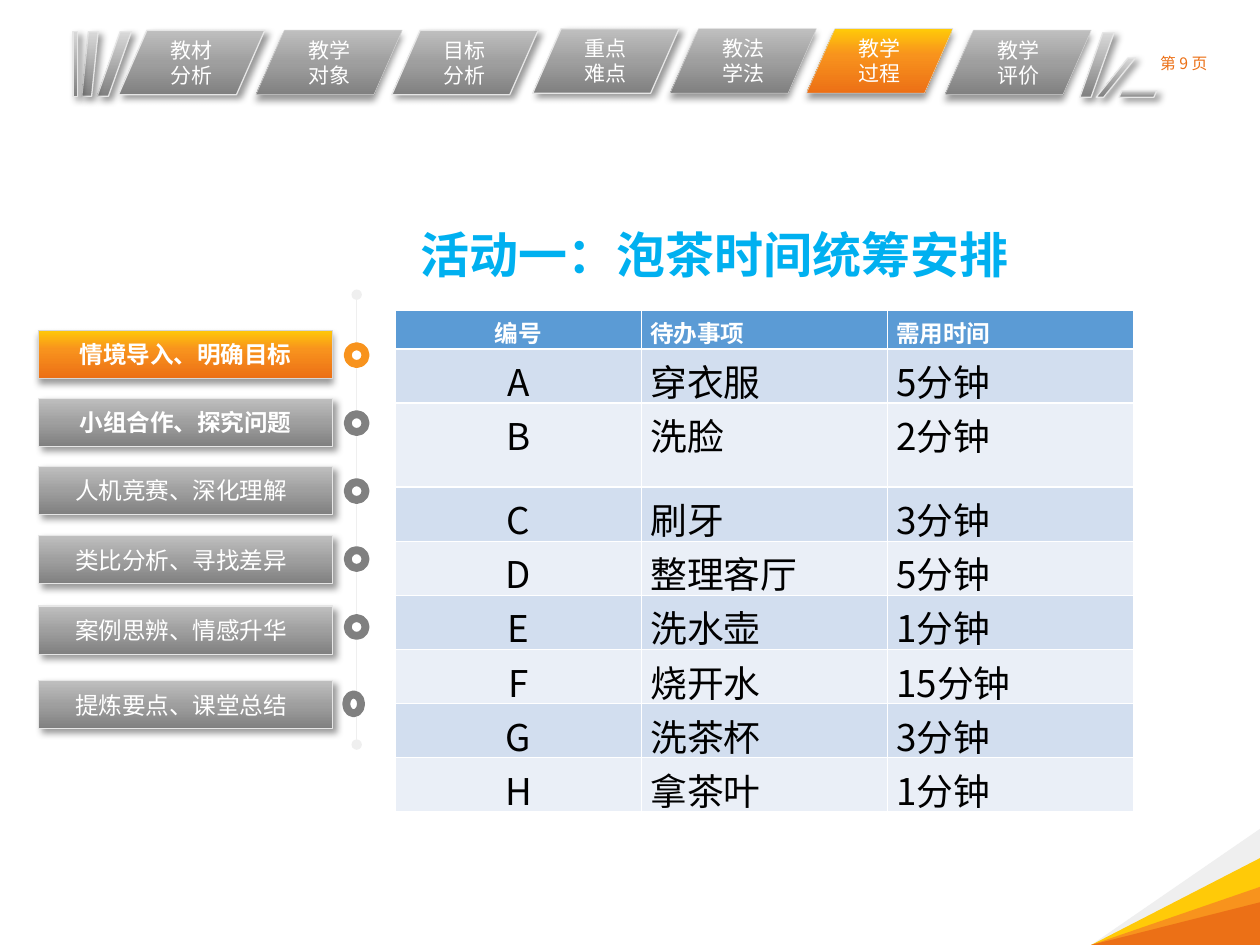
from lxml.etree import SubElement
from pptx import Presentation
from pptx.dml.color import RGBColor
from pptx.enum.shapes import MSO_CONNECTOR, MSO_SHAPE
from pptx.enum.text import MSO_ANCHOR, MSO_AUTO_SIZE, PP_ALIGN
from pptx.oxml.ns import qn
from pptx.util import Cm, Pt

THEME = {
    "font": "Noto Sans CJK SC", "nav_font": "Roboto Condensed",
    "white": "FFFFFF", "black": "000000", "title": "00B0F0",
    "pale": "EFEFEF", "gold": "FFCA08", "orange": "F8931D", "rust": "EC7016",
    "gray": "808080", "edge": "E6E6E6", "rim": "D7D7D7",
    "head": "5B9BD5", "bands": ("D2DEEF", "EAEFF7"),
    "dull": ((0, "BFBFBF"), (50, "9F9F9F"), (100, "808080")),
    "glow": ((0, "FFCA08"), (40, "F8931D"), (100, "EC7016")),
    "steel": ((0, "D9D9D9"), (100, "808080")),
    "title_size": 28, "cell_size": 21, "step_size": 13.5,
    "nav_size": 12, "page_size": 9,
}
LEFT, MID = PP_ALIGN.LEFT, PP_ALIGN.CENTER


def draw(kind, box, fill, line=None, adj=None, turn=None):
    """Add a shape; a tuple fill is a downward gradient, turn is the shadow angle."""
    shape = slide.shapes.add_shape(kind, *[Cm(n) for n in box])
    shape.shadow.inherit = False
    if adj is not None:
        shape.adjustments[0] = adj
    if isinstance(fill, tuple):
        shape.fill.gradient()
        grad = shape._element.spPr.find(qn("a:gradFill"))
        stops = grad.find(qn("a:gsLst"))
        for old in list(stops):
            stops.remove(old)
        for pos, color in fill:
            stop = SubElement(stops, qn("a:gs"), pos=str(pos * 1000))
            SubElement(stop, qn("a:srgbClr"), val=color)
        grad.find(qn("a:lin")).set("ang", "5400000")
    else:
        shape.fill.solid()
        shape.fill.fore_color.rgb = RGBColor.from_string(fill)
    if line:
        shape.line.color.rgb = RGBColor.from_string(line[0])
        shape.line.width = Pt(line[1])
    else:
        shape.line.fill.background()
    if turn is not None:
        glow = SubElement(shape._element.spPr.find(qn("a:effectLst")), qn("a:outerShdw"),
                          blurRad=str(Pt(4)), dist=str(Pt(3)), dir=str(turn * 60000),
                          algn="tl", rotWithShape="0")
        color = SubElement(glow, qn("a:srgbClr"), val=THEME["black"])
        SubElement(color, qn("a:alpha"), val="40000")
    return shape


def write(frame, lines, size, color, align=LEFT, bold=False, font=THEME["font"]):
    for i, line in enumerate(lines):
        para = frame.add_paragraph() if i else frame.paragraphs[0]
        para.alignment = align
        run = para.add_run()
        run.text = line
        for key, value in {"size": Pt(size), "bold": bold, "name": font}.items():
            setattr(run.font, key, value)
        run.font.color.rgb = RGBColor.from_string(color)
        SubElement(run._r.rPr, qn("a:ea"), typeface=THEME["font"])


deck = Presentation()
deck.slide_width, deck.slide_height = Cm(25.4), Cm(19.05)
slide = deck.slides.add_slide(deck.slide_layouts[5])

# Title
title = slide.shapes.title
for key, value in {"left": 8.23, "top": 4.39, "width": 12.37, "height": 1.45}.items():
    setattr(title, key, Cm(value))
form = {"word_wrap": False, "auto_size": MSO_AUTO_SIZE.NONE, "vertical_anchor": MSO_ANCHOR.TOP}
for key, value in form.items():
    setattr(title.text_frame, key, value)
write(title.text_frame, ["活动一：泡茶时间统筹安排"], THEME["title_size"], THEME["title"], bold=True)

# Slanted bars at both ends of the top bar
bars = [
    (1.96, 0.64, 0.69, 1.3, 0.67), (1.65, 0.64, 0.33, 1.3, 0.4), (1.47, 0.64, 0.1, 1.3, 0),
    (21.77, 0.66, 0.69, 1.3, 0.67), (22.1, 1.17, 0.79, 0.79, 0.81), (22.56, 1.83, 0.76, 0.13, 0.44),
]
for *box, adj in bars:
    draw(MSO_SHAPE.PARALLELOGRAM, box, THEME["steel"], (THEME["edge"], 0.75), adj, 45)

# Top bar: left, top, two lines, flat (thin rim, no side margins)
tabs = [
    (5.16, 0.61, "教学 对象", True), (2.39, 0.61, "教材 分析", False),
    (7.9, 0.61, "目标 分析", False), (13.51, 0.58, "教法 学法", True),
    (10.74, 0.58, "重点 难点", False), (16.26, 0.58, "教学 过程", True),
    (19.05, 0.61, "教学 评价", True),
]
for x, y, text, flat in tabs:
    fill = THEME["glow" if text == "教学 过程" else "dull"]
    line = (THEME["rim"], 0.25) if flat else (THEME["edge"], 0.75)
    tab = draw(MSO_SHAPE.PARALLELOGRAM, (x, y, 2.95, 1.3), fill, line, 0.44, 90 if flat else 45)
    if flat:
        tab.text_frame.margin_left = tab.text_frame.margin_right = 0
    write(tab.text_frame, text.split(), THEME["nav_size"], THEME["white"], MID,
          font=THEME["nav_font" if flat else "font"])

page = slide.shapes.add_textbox(Cm(22.94), Cm(0.86), Cm(1.85), Cm(0.84)).text_frame
page.word_wrap, page.vertical_anchor = True, MSO_ANCHOR.MIDDLE
write(page, ["第 9 页"], THEME["page_size"], THEME["rust"], MID)

# Corner fan
for high, name in ((2.34, "pale"), (1.75, "gold"), (1.17, "orange"), (0.86, "rust")):
    fan = draw(MSO_SHAPE.ISOSCELES_TRIANGLE, (22, 19.05 - high, 3.4, high), THEME[name], adj=0)
    fan._element.spPr.find(qn("a:xfrm")).set("flipH", "1")

# Steps along a rail
rail = slide.shapes.add_connector(MSO_CONNECTOR.STRAIGHT, Cm(7.19), Cm(5.94), Cm(7.19), Cm(15.01))
rail.line.color.rgb = RGBColor.from_string(THEME["pale"])
rail.line.width = Pt(0.5)
for end in ("a:headEnd", "a:tailEnd"):
    SubElement(rail.line._get_or_add_ln(), qn(end), type="oval")
SubElement(rail._element.spPr, qn("a:effectLst"))

steps = [
    (6.65, "情境导入、明确目标"), (8.03, "小组合作、探究问题"), (9.4, "人机竞赛、深化理解"),
    (10.8, "类比分析、寻找差异"), (12.22, "案例思辨、情感升华"), (13.72, "提炼要点、课堂总结"),
]
for i, (y, text) in enumerate(steps):
    now, bold = i == 0, i < 2
    line = (THEME["rim"], 0.25) if now else (THEME["edge"], 0.75)
    step = draw(MSO_SHAPE.PARALLELOGRAM, (0.78, y, 5.92, 0.97), THEME["glow" if now else "dull"],
                line, 0, 90 if now else 45)
    if now:
        step.text_frame.margin_left = step.text_frame.margin_right = 0
    write(step.text_frame, [text], THEME["step_size"], THEME["white"], MID if bold else LEFT, bold)
    spot = (6.98, 14, 0.3, 0.38) if i == 5 else (7.01, 6.98 + 1.37 * i, 0.36, 0.36)
    draw(MSO_SHAPE.OVAL, spot, THEME["white"], (THEME["orange" if now else "gray"], 4.5))

# Task table
rows = [
    ("编号", "待办事项", "需用时间"), ("A", "穿衣服", "5分钟"), ("B", "洗脸", "2分钟"),
    ("C", "刷牙", "3分钟"), ("D", "整理客厅", "5分钟"), ("E", "洗水壶", "1分钟"),
    ("F", "烧开水", "15分钟"), ("G", "洗茶杯", "3分钟"), ("H", "拿茶叶", "1分钟"),
]
grid = slide.shapes.add_table(len(rows), 3, Cm(7.97), Cm(6.26), Cm(14.88), Cm(10)).table
pads = {"margin_left": 0.18, "margin_right": 0.18, "margin_top": 0.1, "margin_bottom": 0.1}
for r, row in enumerate(rows):
    grid.rows[r].height = Cm({0: 0.76, 2: 1.7}.get(r, 1.08))
    for c, text in enumerate(row):
        cell = grid.cell(r, c)
        for key, value in pads.items():
            setattr(cell, key, Cm(value))
        cell.fill.solid()
        cell.fill.fore_color.rgb = RGBColor.from_string(THEME["bands"][(r - 1) % 2] if r else THEME["head"])
        write(cell.text_frame, [text], THEME["cell_size" if r else "step_size"],
              THEME["black" if r else "white"], LEFT if c else MID, r == 0)

deck.save("out.pptx")
